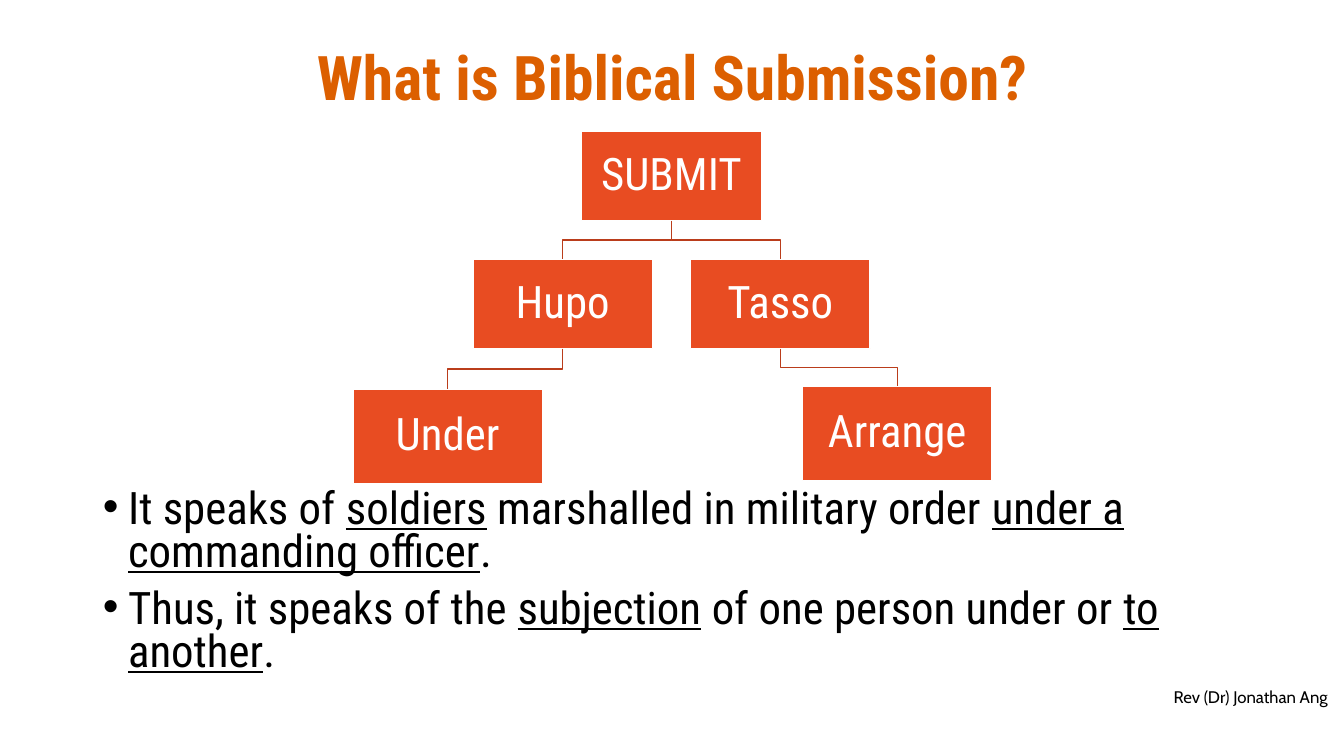
from lxml import etree
from pptx import Presentation
from pptx.dml.color import RGBColor
from pptx.enum.shapes import MSO_SHAPE
from pptx.enum.text import MSO_ANCHOR, MSO_AUTO_SIZE, PP_ALIGN
from pptx.oxml.ns import qn
from pptx.util import Inches, Pt

COLORS = {"title": "DC5F00", "node": "E84C22", "link": "BA3D1B",
          "text": "000000", "white": "FFFFFF"}
HEADING_FONT = "Roboto Condensed"
FOOTER_FONT = "Cabin"

NODES = {
    "SUBMIT": (2.27, 0, 1.78, 0.89),
    "Hupo": (1.19, 1.27, 1.78, 0.89),
    "Tasso": (3.35, 1.27, 1.78, 0.89),
    "Under": (0, 2.56, 1.88, 0.94),
    "Arrange": (4.46, 2.53, 1.88, 0.94),
}
LINKS = [("SUBMIT", "Tasso"), ("SUBMIT", "Hupo"), ("Tasso", "Arrange"), ("Hupo", "Under")]

BULLETS = [
    [("It speaks of ", False), ("soldiers", True), (" marshalled in military order ", False),
     ("under a commanding officer", True), (".", False)],
    [("Thus, it speaks of the ", False), ("subjection", True),
     (" of one person under or ", False), ("to another", True), (".", False)],
]


def color(name):
    return RGBColor.from_string(COLORS[name])


def place(shape, box):
    shape.left, shape.top, shape.width, shape.height = map(Inches, box)


def format_run(run, size, color_name, font_name=HEADING_FONT, bold=False):
    run.font.size = Pt(size)
    run.font.name = font_name
    run.font.bold = bold
    run.font.color.rgb = color(color_name)


def add_title(slide, box):
    title = slide.shapes.title
    place(title, box)
    frame = title.text_frame
    frame.text = "What is Biblical Submission?"
    frame.auto_size = MSO_AUTO_SIZE.NONE
    frame.vertical_anchor = MSO_ANCHOR.MIDDLE
    paragraph = frame.paragraphs[0]
    paragraph.alignment = PP_ALIGN.CENTER
    paragraph.line_spacing = 0.9
    format_run(paragraph.runs[0], 44, "title", bold=True)


def add_link(slide, parent, child):
    start_x, start_y = parent.left + parent.width // 2, parent.top + parent.height
    end_x, end_y = child.left + child.width // 2, child.top
    middle_y = (start_y + end_y) // 2
    builder = slide.shapes.build_freeform(start_x, start_y)
    builder.add_line_segments(
        [(start_x, middle_y), (end_x, middle_y), (end_x, end_y)], close=False)
    link = builder.convert_to_shape()
    link.shadow.inherit = False
    link.fill.background()
    link.line.color.rgb = color("link")
    link.line.width = Pt(1)


def add_node(slide, label, box):
    node = slide.shapes.add_shape(MSO_SHAPE.RECTANGLE, *map(Inches, box))
    node.shadow.inherit = False
    node.fill.solid()
    node.fill.fore_color.rgb = color("node")
    node.line.color.rgb = color("white")
    node.line.width = Pt(1)
    frame = node.text_frame
    frame.text = label
    frame.vertical_anchor = MSO_ANCHOR.MIDDLE
    frame.margin_left = frame.margin_right = Inches(0.02)
    frame.margin_top = frame.margin_bottom = Inches(0.02)
    paragraph = frame.paragraphs[0]
    paragraph.alignment = PP_ALIGN.CENTER
    paragraph.line_spacing = 0.9
    format_run(paragraph.runs[0], 32, "white")
    return node


def add_word_tree(slide, left, top):
    nodes = {label: add_node(slide, label, (left + x, top + y, width, height))
             for label, (x, y, width, height) in NODES.items()}
    for parent, child in LINKS:
        add_link(slide, nodes[parent], nodes[child])


def add_bullets(slide, box):
    body = slide.placeholders[1]
    place(body, box)
    frame = body.text_frame
    frame.auto_size = MSO_AUTO_SIZE.NONE
    for index, parts in enumerate(BULLETS):
        paragraph = frame.add_paragraph() if index else frame.paragraphs[0]
        paragraph.line_spacing = 0.8
        paragraph.space_before = Pt(10)
        properties = paragraph._p.get_or_add_pPr()
        properties.set("marL", str(Inches(0.25)))
        properties.set("indent", str(-Inches(0.25)))
        etree.SubElement(properties, qn("a:buFont")).set("typeface", "Arial")
        etree.SubElement(properties, qn("a:buChar")).set("char", "•")
        for text, underlined in parts:
            run = paragraph.add_run()
            run.text = text
            format_run(run, 32, "text")
            run.font.underline = underlined


def add_footer(slide, box):
    frame = slide.shapes.add_textbox(*map(Inches, box)).text_frame
    frame.word_wrap = True
    frame.text = "Rev (Dr) Jonathan Ang"
    frame.vertical_anchor = MSO_ANCHOR.MIDDLE
    paragraph = frame.paragraphs[0]
    paragraph.alignment = PP_ALIGN.RIGHT
    format_run(paragraph.runs[0], 12, "text", FOOTER_FONT)


def main():
    presentation = Presentation()
    presentation.slide_width = Inches(13.33)
    presentation.slide_height = Inches(7.5)
    slide = presentation.slides.add_slide(presentation.slide_layouts[1])
    add_title(slide, (0.92, 0.4, 11.5, 0.79))
    add_bullets(slide, (0.92, 4.81, 11.5, 2.14))
    add_word_tree(slide, 3.5, 1.3)
    add_footer(slide, (7.83, 6.74, 5.44, 0.34))
    presentation.save("out.pptx")


if __name__ == "__main__":
    main()
